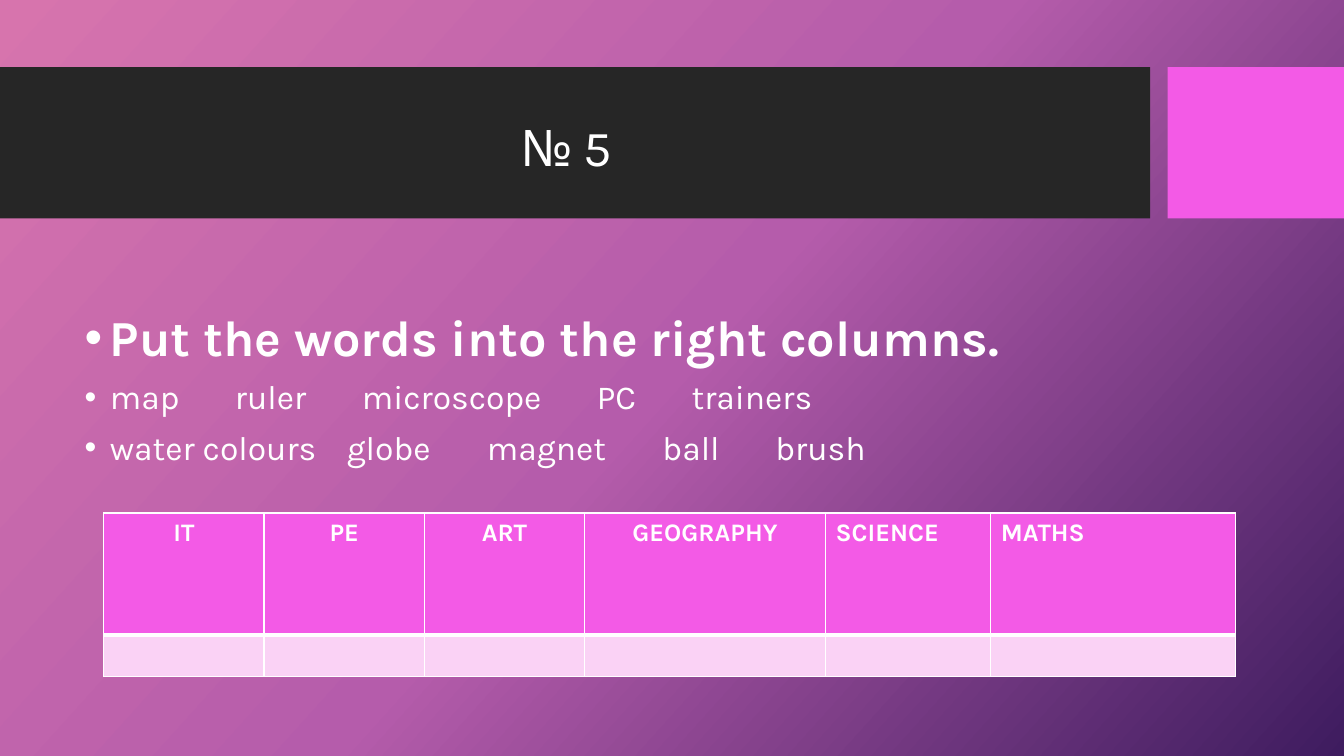
import copy

import pptx
import pptx.dml.color
import pptx.enum.shapes
import pptx.enum.text
import pptx.oxml
import pptx.oxml.ns
import pptx.util

RGB = pptx.dml.color.RGBColor
ALIGN = pptx.enum.text.PP_ALIGN
ANCHOR = pptx.enum.text.MSO_ANCHOR
qn = pptx.oxml.ns.qn

WHITE = RGB(0xFF, 0xFF, 0xFF)
CHARCOAL = RGB(0x26, 0x26, 0x26)
PINK = RGB(0xF3, 0x5A, 0xE6)
PALE_PINK = RGB(0xFA, 0xD2, 0xF5)
BACKDROP = [
    (0, RGB(0xD7, 0x74, 0xAD)),
    (0.5, RGB(0xB5, 0x5C, 0xAB)),
    (1, RGB(0x3E, 0x1C, 0x5F)),
]
FONT = "Karla"

SLIDE_WIDTH = pptx.util.Inches(13.33)
SLIDE_HEIGHT = pptx.util.Inches(7.5)
GRID_COLUMNS, GRID_ROWS = 160, 90

HEADING = "Put the words into the right columns."
WORD_LINES = [
    ("map\truler\tmicroscope\tPC\ttrainers", (1.49, 2.75, 5.08, 6.02)),
    ("water colours\tglobe\tmagnet\tball\tbrush", (2.6, 3.99, 5.73, 6.85)),
]
SUBJECTS = [
    ("IT", 19.08, ALIGN.CENTER),
    ("PE", 19.08, ALIGN.CENTER),
    ("ART", 19.08, ALIGN.CENTER),
    ("GEOGRAPHY", 28.68, ALIGN.CENTER),
    ("SCIENCE", 19.68, ALIGN.LEFT),
    ("MATHS", 29.16, ALIGN.LEFT),
]
ROW_HEIGHTS = (14.52, 4.92)


def across(columns):
    return round(SLIDE_WIDTH * columns / GRID_COLUMNS)


def down(rows):
    return round(SLIDE_HEIGHT * rows / GRID_ROWS)


def place(box):
    left, top, width, height = box
    return across(left), down(top), across(width), down(height)


def move(shape, box):
    shape.left, shape.top, shape.width, shape.height = place(box)


def child(tag, **attributes):
    element = pptx.oxml.parse_xml(f"<a:{tag} {pptx.oxml.ns.nsdecls('a')}/>")
    for name, value in attributes.items():
        element.set(name, str(value))
    return element


def write(para, text, size, bold=False, align=ALIGN.LEFT, before=0,
          spacing=None, bullet=False, tabs=()):
    para.alignment = align
    para.space_before = pptx.util.Pt(before)
    if spacing:
        para.line_spacing = spacing
    properties = para._p.get_or_add_pPr()
    if bullet:
        indent = pptx.util.Inches(0.25)
        properties.set("marL", str(indent))
        properties.set("indent", str(-indent))
        properties.append(child("buFont", typeface="Arial"))
        properties.append(child("buChar", char="•"))
    if tabs:
        stops = child("tabLst")
        for stop in tabs:
            stops.append(child("tab", pos=pptx.util.Inches(stop), algn="l"))
        properties.append(stops)
    span = para.add_run()
    span.text = text
    for font in (para.font, span.font):
        font.name = FONT
        font.size = pptx.util.Pt(size)
        font.bold = bold
        font.color.rgb = WHITE


def paint_background(page):
    fill = page.background.fill
    fill.gradient()
    fill.gradient_angle = 318
    stops = page.background._cSld.find(".//" + qn("a:gsLst"))
    stops.insert(1, copy.deepcopy(stops[0]))
    for stop, (position, color) in zip(fill.gradient_stops, BACKDROP):
        stop.position = position
        stop.color.rgb = color


def add_band(page, box, color):
    band = page.shapes.add_shape(
        pptx.enum.shapes.MSO_SHAPE.RECTANGLE, *place(box))
    band.shadow.inherit = False
    band.fill.solid()
    band.fill.fore_color.rgb = color
    band.line.fill.background()
    page.shapes._spTree.insert(2, band._element)


def build_title(page, box):
    left, top, width, height = box
    accent_left = left + 139
    add_band(page, (left, top, 136.92, height), CHARCOAL)
    add_band(page, (accent_left, top, width - 139, height), PINK)
    title = page.shapes.title
    move(title, (left + 10.92, top + 1.44, 113.04, 16.92))
    frame = title.text_frame
    frame.auto_size = pptx.enum.text.MSO_AUTO_SIZE.NONE
    frame.vertical_anchor = ANCHOR.MIDDLE
    write(frame.paragraphs[0], "№ 5", 36, align=ALIGN.CENTER, spacing=0.9)


def build_words(page, box):
    body = page.placeholders[1]
    move(body, box)
    frame = body.text_frame
    frame.auto_size = pptx.enum.text.MSO_AUTO_SIZE.NONE
    frame.vertical_anchor = ANCHOR.TOP
    write(frame.paragraphs[0], HEADING, 36, bold=True, spacing=0.9, bullet=True)
    for text, tabs in WORD_LINES:
        write(frame.add_paragraph(), text, 24, before=10, spacing=0.9,
              bullet=True, tabs=tabs)


def border(cell, **widths):
    properties = cell._tc.get_or_add_tcPr()
    for index, side in enumerate(("L", "R", "T", "B")):
        line = child("ln" + side, w=pptx.util.Pt(widths.get(side, 1)))
        paint = child("solidFill")
        paint.append(child("srgbClr", val=WHITE))
        line.append(paint)
        properties.insert(index, line)


def build_table(page, box):
    table = page.shapes.add_table(
        len(ROW_HEIGHTS), len(SUBJECTS), *place(box)).table
    table.horz_banding = False
    for row, height in zip(table.rows, ROW_HEIGHTS):
        row.height = down(height)
    for index, (subject, width, align) in enumerate(SUBJECTS):
        table.columns[index].width = across(width)
        header, answer = table.cell(0, index), table.cell(1, index)
        for cell, color in ((header, PINK), (answer, PALE_PINK)):
            cell.fill.solid()
            cell.fill.fore_color.rgb = color
        border(header, B=3)
        border(answer, T=3)
        write(header.text_frame.paragraphs[0], subject, 18, bold=True, align=align)


def main():
    deck = pptx.Presentation()
    deck.slide_width, deck.slide_height = SLIDE_WIDTH, SLIDE_HEIGHT
    page = deck.slides.add_slide(deck.slide_layouts[1])
    paint_background(page)
    build_title(page, (0, 8, GRID_COLUMNS, 18))
    build_words(page, (8.88, 36.6, 126.12, 41.4))
    build_table(page, (12.36, 61.08, 134.88, sum(ROW_HEIGHTS)))
    deck.save("out.pptx")


if __name__ == "__main__":
    main()
